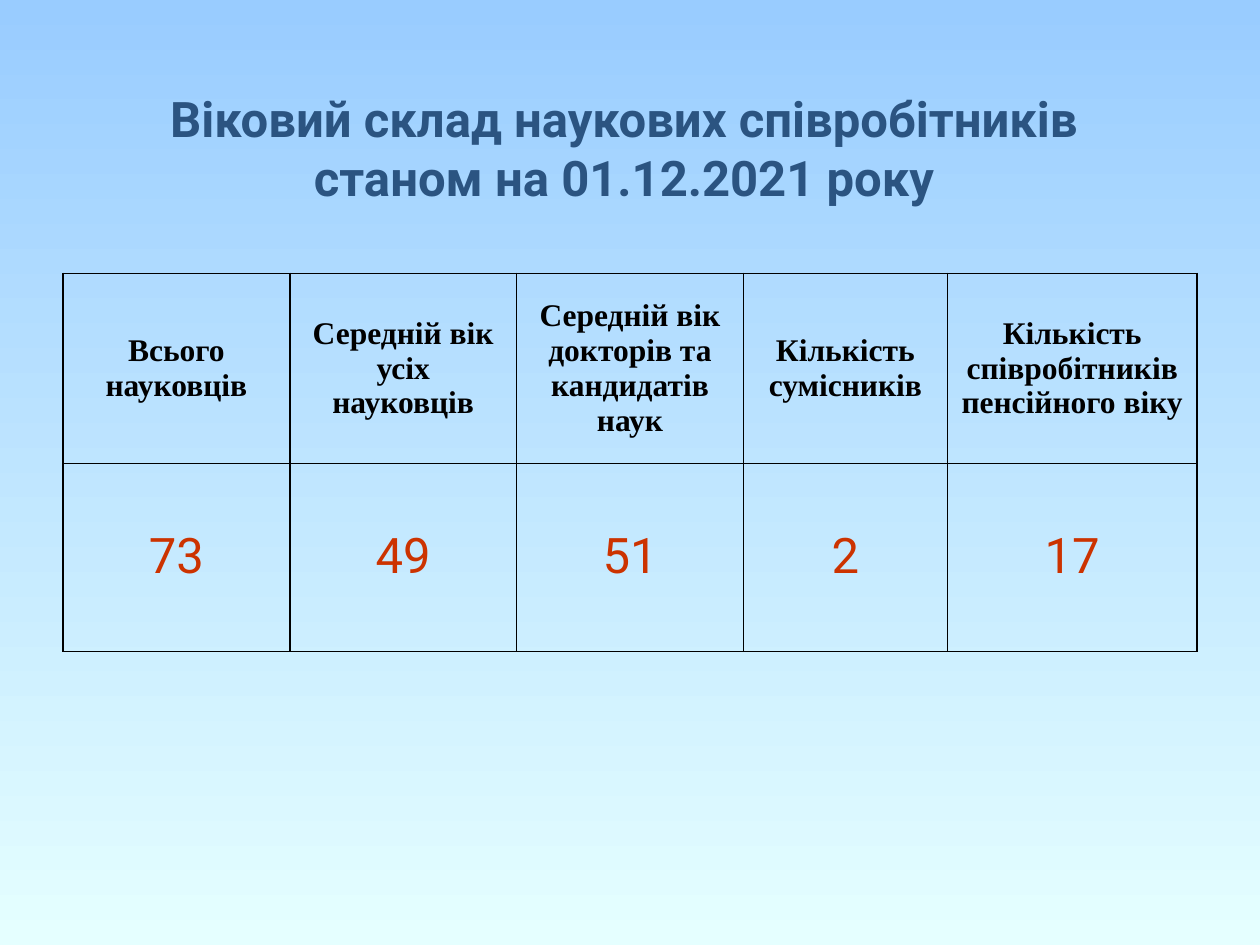
from lxml.etree import SubElement
from pptx import Presentation
from pptx.dml.color import RGBColor
from pptx.enum.text import MSO_ANCHOR, PP_ALIGN
from pptx.oxml.ns import qn
from pptx.util import Cm, Pt

TITLE = "Віковий склад наукових співробітників \nстаном на 01.12.2021 року "
STAFF_FIGURES = {
    "Всього науковців": "73",
    "Середній вік усіх науковців": "49",
    "Середній вік докторів та кандидатів наук": "51",
    "Кількість сумісників": "2",
    "Кількість співробітників пенсійного віку": "17",
}
COLUMN_SHARES = (0.2, 0.2, 0.2, 0.18, 0.22)
ROW_HEIGHTS = (3.83, 3.79)
HEADING_FORMAT = {"size": 18, "font": "Times New Roman", "color": "000000", "bold": True}
FIGURE_FORMAT = {"size": 28, "font": "Roboto", "color": "CC3300", "bold": False}


def rgb(code):
    """Turn a hex string into a colour."""
    return RGBColor.from_string(code)


def write(frame, text, *, size, font, color, bold):
    """Write centred text, with newlines as line breaks, in one format."""
    frame.word_wrap = True
    paragraph = frame.paragraphs[0]
    paragraph.text = text.replace("\n", "\v")
    paragraph.alignment = PP_ALIGN.CENTER
    for run in paragraph.runs:
        run.font.size = Pt(size)
        run.font.name = font
        run.font.bold = bold
        run.font.color.rgb = rgb(color)


def paint_background(slide, top, bottom):
    """Fill the background with a gradient running downwards."""
    fill = slide.background.fill
    fill.gradient()
    fill.gradient_angle = 270
    for stop, position, color in zip(fill.gradient_stops, (0, 1), (top, bottom)):
        stop.position = position
        stop.color.rgb = rgb(color)


def outline(cell, color, points):
    """Draw the four borders of an unfilled cell."""
    properties = cell._tc.get_or_add_tcPr()
    for side in ("a:lnL", "a:lnR", "a:lnT", "a:lnB"):
        border = SubElement(properties, qn(side), w=str(Pt(points)))
        solid = SubElement(border, qn("a:solidFill"))
        SubElement(solid, qn("a:srgbClr"), val=color)
    cell.fill.background()


def add_title(slide, left, top, width, height):
    """Place the two-line title, centred in its box."""
    frame = slide.shapes.add_textbox(Cm(left), Cm(top), Cm(width), Cm(height)).text_frame
    frame.vertical_anchor = MSO_ANCHOR.MIDDLE
    write(frame, TITLE, size=28, font="Roboto", color="2B5481", bold=True)


def add_staff_table(slide, left, top, width):
    """Place the table of headings with one figure under each."""
    rows = (
        (STAFF_FIGURES.keys(), HEADING_FORMAT),
        (STAFF_FIGURES.values(), FIGURE_FORMAT),
    )
    table = slide.shapes.add_table(
        len(rows), len(STAFF_FIGURES), Cm(left), Cm(top), Cm(width), Cm(sum(ROW_HEIGHTS))
    ).table
    table.first_row = table.horz_banding = False
    for column, share in zip(table.columns, COLUMN_SHARES):
        column.width = Cm(width * share)
    for row, height, (texts, text_format) in zip(table.rows, ROW_HEIGHTS, rows):
        row.height = Cm(height)
        for cell, text in zip(row.cells, texts):
            cell.vertical_anchor = MSO_ANCHOR.MIDDLE
            write(cell.text_frame, text, **text_format)
            outline(cell, "000000", 1)


def main():
    """Build and save the slide."""
    deck = Presentation()
    deck.slide_width, deck.slide_height = Cm(25.4), Cm(19.05)
    slide = deck.slides.add_slide(deck.slide_layouts[6])
    paint_background(slide, "99CCFF", "E5FFFF")
    add_title(slide, 1.27, 1.07, 22.86, 3.81)
    add_staff_table(slide, 1.27, 5.51, 22.86)
    deck.save("out.pptx")


if __name__ == "__main__":
    main()
